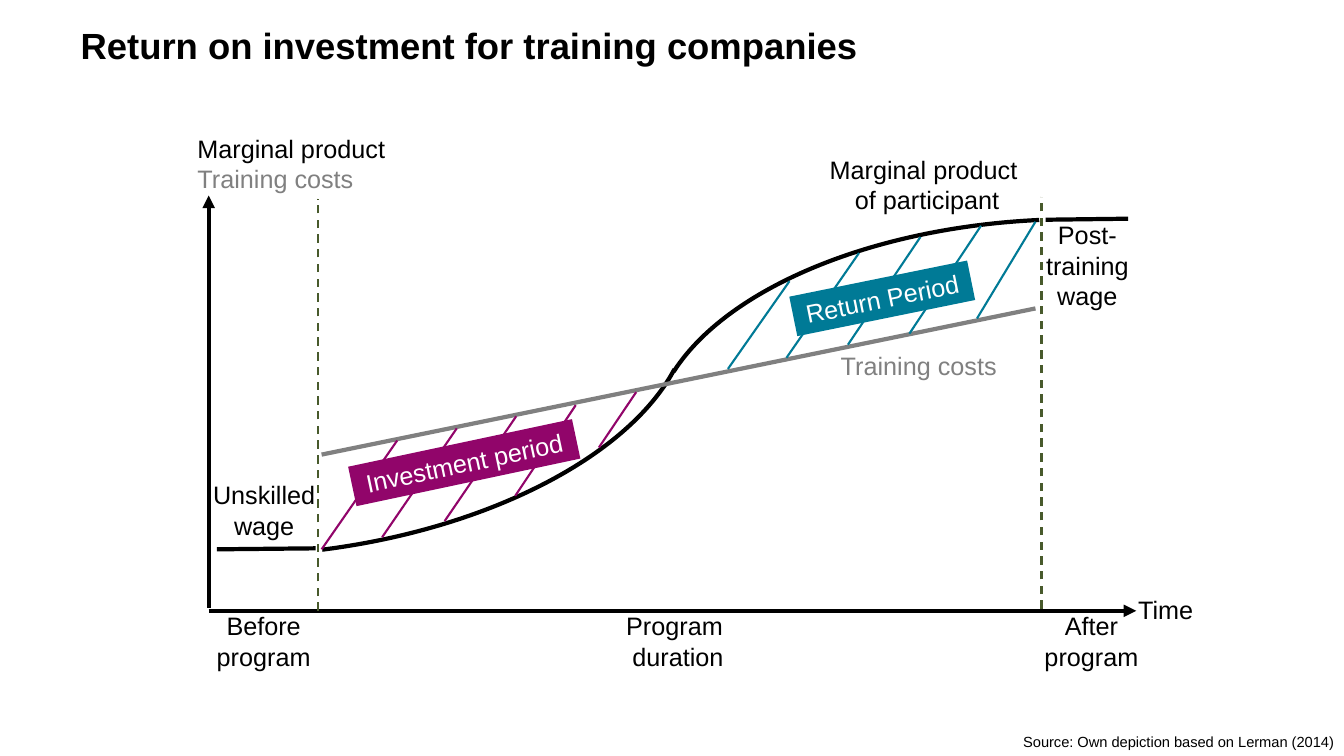
import pptx
import pptx.dml.color
import pptx.enum.dml
import pptx.enum.shapes
import pptx.enum.text
import pptx.oxml
import pptx.util
from pptx.util import Inches

BLACK = "000000"
GRAY = "808080"
PURPLE = "91056A"
TEAL = "007A96"
OLIVE = "485A2C"
CENTER = pptx.enum.text.PP_ALIGN.CENTER
LEFT = pptx.enum.text.PP_ALIGN.LEFT


def color(value):
    return pptx.dml.color.RGBColor.from_string(value)


def write_text(shape, text, size=18, text_color=BLACK, bold=False, align=CENTER, spacing=None):
    frame = shape.text_frame
    frame.word_wrap = True
    for index, line in enumerate(text.split("\n")):
        paragraph = frame.add_paragraph() if index else frame.paragraphs[0]
        paragraph.alignment = align
        paragraph.line_spacing = spacing
        run = paragraph.add_run()
        run.text = line
        run.font.name = "Arial"
        run.font.size = pptx.util.Pt(size)
        run.font.bold = bold
        run.font.color.rgb = color(text_color)


def add_text(slide, box, text, **text_format):
    shape = slide.shapes.add_textbox(*map(Inches, box))
    write_text(shape, text, **text_format)
    return shape


def add_line(slide, start, end, line_color=BLACK, width=3, arrow=False, dashed=False):
    connector = slide.shapes.add_connector(
        pptx.enum.shapes.MSO_CONNECTOR.STRAIGHT, *map(Inches, (*start, *end)))
    connector.line.color.rgb = color(line_color)
    connector.line.width = pptx.util.Pt(width)
    if dashed:
        connector.line.dash_style = pptx.enum.dml.MSO_LINE.DASH
    if arrow:
        tail = pptx.oxml.parse_xml(
            '<a:tailEnd xmlns:a="http://schemas.openxmlformats.org/drawingml/2006/main" type="triangle"/>')
        connector.line._get_or_add_ln().append(tail)
    effects = pptx.oxml.parse_xml(
        '<a:effectLst xmlns:a="http://schemas.openxmlformats.org/drawingml/2006/main"/>')
    connector._element.spPr.append(effects)


def add_arc(slide, box, rotation):
    arc = slide.shapes.add_shape(pptx.enum.shapes.MSO_SHAPE.ARC, *map(Inches, box))
    arc.adjustments[0] = 168.46
    arc.adjustments[1] = 0
    arc.rotation = rotation
    arc.shadow.inherit = False
    arc.fill.background()
    arc.line.color.rgb = color(BLACK)
    arc.line.width = pptx.util.Pt(3)


def add_period_label(slide, box, text, fill_color, rotation):
    label = slide.shapes.add_shape(pptx.enum.shapes.MSO_SHAPE.RECTANGLE, *map(Inches, box))
    label.rotation = rotation
    label.shadow.inherit = False
    label.fill.solid()
    label.fill.fore_color.rgb = color(fill_color)
    label.line.fill.background()
    write_text(label, text, text_color="FFFFFF")


def add_curves(slide, left, top, width, height):
    def at(x, y):
        return left + x, top + y

    for x, y, rotation in ((-1.17, -2.44, 82.8), (6.29, -1.65, 267.4)):
        add_arc(slide, (*at(x, y), 4.08, 7.86), rotation)
    add_line(slide, at(0, height), at(width, height), arrow=True)
    add_line(slide, at(0, height - 0.03), at(0, 0), arrow=True)
    add_line(slide, at(1.12, 2.57), at(8.2, 1.12), GRAY)
    for x, bottom in ((1.08, height), (8.26, height - 0.02)):
        add_line(slide, at(x, bottom), at(x, bottom - 4.09), OLIVE, 1.5, dashed=True)
    add_line(slide, at(1.06, 3.5), at(0.08, 3.51))
    add_line(slide, at(9.12, 0.23), at(8.3, 0.24))


def add_periods(slide, left, top):
    hatches = {
        PURPLE: ((1.12, 3.51, 1.87, 2.43), (1.72, 3.39, 2.46, 2.31), (2.34, 3.23, 3.05, 2.19),
                 (3.04, 2.98, 3.64, 2.08), (3.87, 2.5, 4.24, 1.95)),
        TEAL: ((5.15, 1.72, 5.76, 0.85), (5.73, 1.61, 6.45, 0.57), (6.34, 1.48, 7.06, 0.41),
               (6.95, 1.37, 7.66, 0.3), (7.62, 1.22, 8.2, 0.26)),
    }
    for hatch_color, lines in hatches.items():
        for x1, y1, x2, y2 in lines:
            add_line(slide, (left + x1, top + y1), (left + x2, top + y2), hatch_color, 1.5)
    add_period_label(slide, (left + 1.4, top + 2.45, 2.27, 0.4), "Investment period", PURPLE, 348)
    add_period_label(slide, (left + 5.78, top + 0.82, 1.8, 0.4), "Return Period", TEAL, 348.5)


def add_labels(slide, left, top):
    labels = (
        (3.44, 4.07, 2.43, 0.71, "Program \nduration"),
        (5.98, -0.46, 2.29, 0.71, "Marginal product \nof participant"),
        (-0.67, 4.07, 2.43, 0.71, "Before\nprogram"),
        (8.18, 4.07, 1.15, 0.71, "After\nprogram"),
        (-0.45, 2.77, 2, 0.71, "Unskilled\nwage"),
        (7.5, 0.19, 2.43, 1.01, "Post-\ntraining\nwage"),
    )
    for x, y, width, height, text in labels:
        add_text(slide, (left + x, top + y, width, height), text)
    add_text(slide, (left + 9.12, top + 3.91, 0.9, 0.4), "Time", align=LEFT)
    add_text(slide, (left + 6.17, top + 1.49, 1.89, 0.4), "Training costs",
             text_color=GRAY, align=LEFT)
    axis_label = add_text(slide, (left - 0.21, top - 0.67, 2.55, 0.71),
                          "Marginal product\nTraining costs", align=LEFT)
    axis_label.text_frame.paragraphs[1].runs[0].font.color.rgb = color(GRAY)


def add_diagram(slide, left, top, width, height):
    add_curves(slide, left, top, width, height)
    add_periods(slide, left, top)
    add_labels(slide, left, top)


def add_title(slide, box):
    title = add_text(slide, box, "Return on investment for training companies",
                     size=26, bold=True, align=LEFT, spacing=0.9)
    frame = title.text_frame
    frame.margin_left = frame.margin_top = frame.margin_right = frame.margin_bottom = 0


def main():
    presentation = pptx.Presentation()
    presentation.slide_width = Inches(13.33)
    presentation.slide_height = Inches(7.5)
    slide = presentation.slides.add_slide(presentation.slide_layouts[6])
    add_title(slide, (0.8, 0.28, 11.73, 0.98))
    add_diagram(slide, 2.07, 1.94, 9.2, 4.12)
    add_text(slide, (10.05, 7.13, 3.87, 0.34), "Source: Own depiction based on Lerman (2014)",
             size=10.5, align=LEFT, spacing=1.5)
    presentation.save("out.pptx")


if __name__ == "__main__":
    main()
